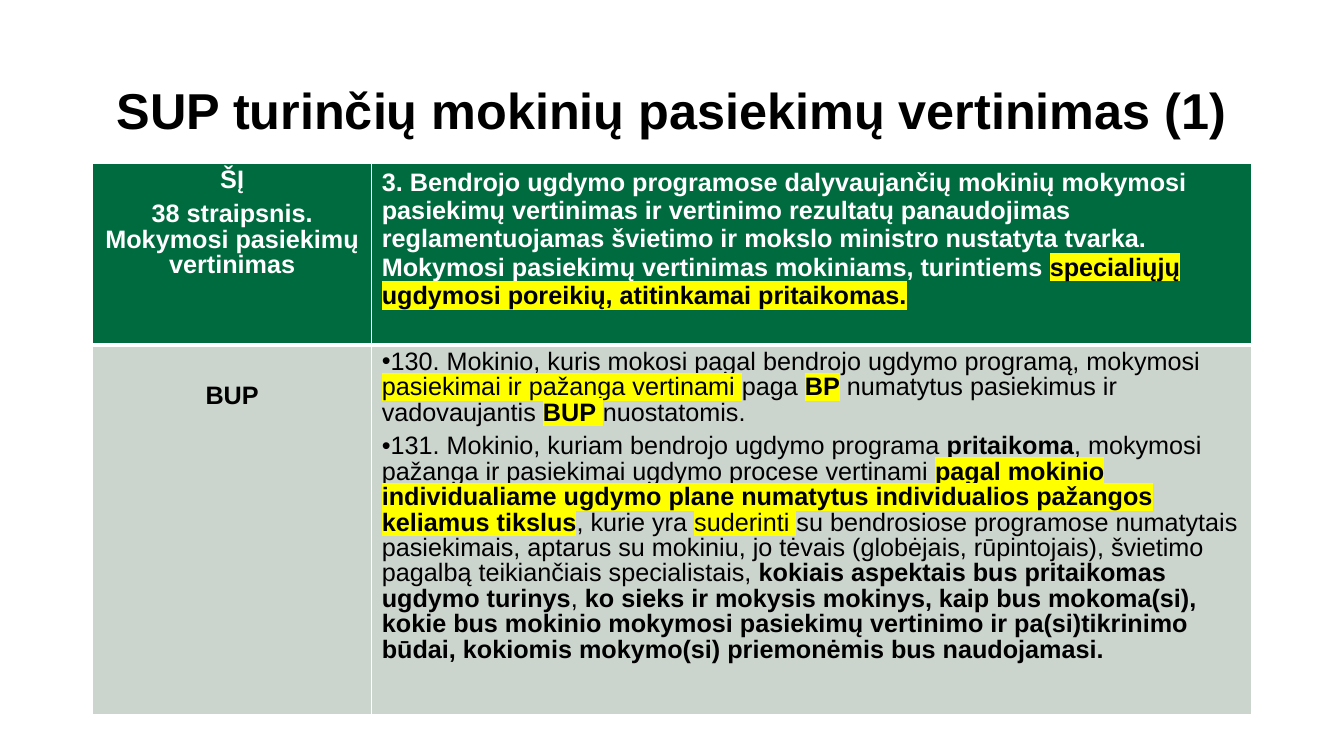
"""Build a slide with a table on assessing pupils with special educational needs."""
from lxml.etree import SubElement
from pptx import Presentation
from pptx.dml.color import RGBColor
from pptx.enum.text import MSO_ANCHOR, PP_ALIGN
from pptx.oxml import parse_xml
from pptx.oxml.ns import nsdecls, qn
from pptx.util import Cm, Pt

COLOURS = {
    "text": "000000",
    "white": "FFFFFF",
    "header": "006B3E",
    "body": "CCD4CE",
    "highlight": "FFFF00",
}
BOLD, MARKED, BOLD_MARKED = {"bold"}, {"marked"}, {"bold", "marked"}
PLAIN = set()


def format_run(run, size, colour, styles):
    run.font.size = Pt(size)
    run.font.bold = "bold" in styles
    run.font.color.rgb = RGBColor.from_string(COLOURS[colour])
    if "marked" in styles:
        run.font.color.rgb = RGBColor.from_string(COLOURS["text"])
        highlight = parse_xml(
            f'<a:highlight {nsdecls("a")}><a:srgbClr val="{COLOURS["highlight"]}"/></a:highlight>'
        )
        run.font._element.find(qn("a:solidFill")).addnext(highlight)
    run.font.name = "Arial"


def add_borders(cell, bottom_width):
    widths = {"lnL": 1, "lnR": 1, "lnT": 1, "lnB": bottom_width}
    for position, (side, width) in enumerate(widths.items()):
        border = parse_xml(
            f'<a:{side} {nsdecls("a")} w="{Pt(width)}"><a:solidFill>'
            f'<a:srgbClr val="{COLOURS["white"]}"/></a:solidFill></a:{side}>'
        )
        cell._tc.get_or_add_tcPr().insert(position, border)


presentation = Presentation()
presentation.slide_width = Cm(33.87)
presentation.slide_height = Cm(19.05)
slide = presentation.slides.add_slide(presentation.slide_layouts[5])

title = slide.shapes.title
title.left, title.top, title.width, title.height = Cm(2.33), Cm(1.01), Cm(29.21), Cm(3.68)
title.text_frame.text = "SUP turinčių mokinių pasiekimų vertinimas (1)"
title.text_frame.vertical_anchor = MSO_ANCHOR.MIDDLE
title_paragraph = title.text_frame.paragraphs[0]
title_paragraph.alignment = PP_ALIGN.CENTER
title_paragraph.line_spacing = 0.9
format_run(title_paragraph.runs[0], 36, "text", BOLD)

law_label = [
    [("ŠĮ", BOLD)],
    [("38 straipsnis. Mokymosi pasiekimų vertinimas", BOLD)],
]
law_text = [[
    ("3. Bendrojo ugdymo programose dalyvaujančių mokinių mokymosi pasiekimų vertinimas ir "
     "vertinimo rezultatų panaudojimas reglamentuojamas švietimo ir mokslo ministro nustatyta "
     "tvarka. Mokymosi pasiekimų vertinimas mokiniams, turintiems ", BOLD),
    ("specialiųjų ugdymosi poreikių, atitinkamai pritaikomas.", BOLD_MARKED),
]]
plan_label = [[("BUP", BOLD)]]
plan_text = [
    [
        ("130. Mokinio, kuris mokosi pagal bendrojo ugdymo programą, mokymosi ", PLAIN),
        ("pasiekimai ir pažanga vertinami ", MARKED),
        ("paga ", PLAIN),
        ("BP", BOLD_MARKED),
        (" numatytus pasiekimus ir vadovaujantis ", PLAIN),
        ("BUP ", BOLD_MARKED),
        ("nuostatomis.", PLAIN),
    ],
    [
        ("131. Mokinio, kuriam bendrojo ugdymo programa ", PLAIN),
        ("pritaikoma", BOLD),
        (", mokymosi pažanga ir pasiekimai ugdymo procese vertinami ", PLAIN),
        ("pagal mokinio individualiame ugdymo plane numatytus individualios pažangos "
         "keliamus tikslus", BOLD_MARKED),
        (", kurie yra ", PLAIN),
        ("suderinti ", MARKED),
        ("su bendrosiose programose numatytais pasiekimais, aptarus su mokiniu, jo tėvais "
         "(globėjais, rūpintojais), švietimo pagalbą teikiančiais specialistais, ", PLAIN),
        ("kokiais aspektais bus pritaikomas ugdymo turinys", BOLD),
        (", ", PLAIN),
        ("ko sieks ir mokysis mokinys, kaip bus mokoma(si), kokie bus mokinio mokymosi "
         "pasiekimų vertinimo ir pa(si)tikrinimo būdai, kokiomis mokymo(si) priemonėmis bus "
         "naudojamasi.", BOLD),
    ],
]

table = slide.shapes.add_table(2, 2, Cm(2.33), Cm(4.12), Cm(29.21), Cm(13.89)).table
table.horz_banding = False
for column, width in zip(table.columns, (7.04, 22.17)):
    column.width = Cm(width)
for row, height in zip(table.rows, (4.57, 9.32)):
    row.height = Cm(height)

row_styles = [("header", "white", 3), ("body", "text", 1)]
contents = [[law_label, law_text], [plan_label, plan_text]]
for row_index, (fill, colour, bottom_width) in enumerate(row_styles):
    for column_index, paragraphs in enumerate(contents[row_index]):
        cell = table.cell(row_index, column_index)
        cell.fill.solid()
        cell.fill.fore_color.rgb = RGBColor.from_string(COLOURS[fill])
        add_borders(cell, bottom_width)
        for paragraph_index, runs in enumerate(paragraphs):
            if paragraph_index:
                paragraph = cell.text_frame.add_paragraph()
            else:
                paragraph = cell.text_frame.paragraphs[0]
            paragraph.alignment = PP_ALIGN.LEFT if column_index else PP_ALIGN.CENTER
            if paragraphs is not law_text:
                paragraph.line_spacing = 0.9
                paragraph.space_after = Pt(6)
            if paragraphs is plan_text:
                properties = paragraph._p.get_or_add_pPr()
                properties.set("marL", "0")
                properties.set("indent", str(-Cm(0.64)))
                SubElement(properties, qn("a:buFont"), typeface="Arial")
                SubElement(properties, qn("a:buChar"), char="•")
            for text, styles in runs:
                run = paragraph.add_run()
                run.text = text
                format_run(run, 18, colour, styles)
table.cell(1, 0).margin_top = Cm(1)

presentation.save("out.pptx")
